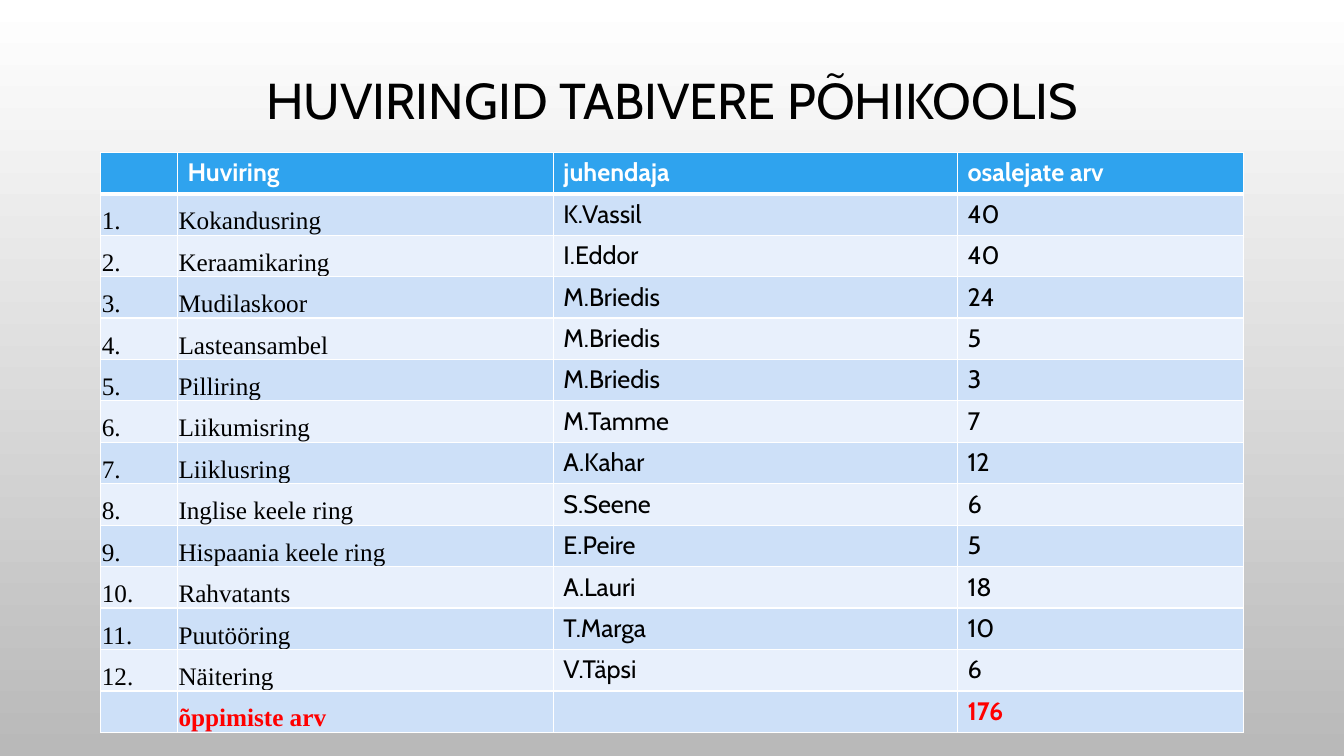
from lxml import etree
from pptx import Presentation
from pptx.dml.color import RGBColor
from pptx.enum.text import MSO_ANCHOR, PP_ALIGN
from pptx.oxml.ns import qn
from pptx.util import Pt

CENTER = PP_ALIGN.CENTER
MIDDLE, BOTTOM = MSO_ANCHOR.MIDDLE, MSO_ANCHOR.BOTTOM
SANS, SERIF = "Cabin", "Times New Roman"
BLACK, WHITE, RED = "000000", "FFFFFF", "FF0000"
HEADER_FILL, BAND_FILLS = "2FA3EE", ("CDE0F8", "E8F0FC")

TITLE_BOX = (72, 49, 816, 49)
TABLE_BOX = (72, 108.8, 816, 414.6)
COLUMN_WIDTHS = (54.8, 268.5, 288.6, 204.1)
LIST_MARGINS = {"margin_left": Pt(0.75), "margin_top": Pt(0.75),
                "margin_right": Pt(0.75), "margin_bottom": Pt(0)}

HEADER = ("", "Huviring", "juhendaja", "osalejate arv")
CLUBS = (
    ("Kokandusring", "K.Vassil", 40),
    ("Keraamikaring", "I.Eddor", 40),
    ("Mudilaskoor", "M.Briedis", 24),
    ("Lasteansambel", "M.Briedis", 5),
    ("Pilliring", "M.Briedis", 3),
    ("Liikumisring", "M.Tamme", 7),
    ("Liiklusring", "A.Kahar", 12),
    ("Inglise keele ring", "S.Seene", 6),
    ("Hispaania keele ring", "E.Peire", 5),
    ("Rahvatants", "A.Lauri", 18),
    ("Puutööring", "T.Marga", 10),
    ("Näitering", "V.Täpsi", 6),
)
TOTAL = ("", "õppimiste arv", "", sum(count for _, _, count in CLUBS))


def color(hex_value):
    """Turn a hex string into a colour."""
    return RGBColor.from_string(hex_value)


def apply_format(target, values):
    """Set each named attribute on the target."""
    for name, value in values.items():
        setattr(target, name, value)


def write_text(paragraph, text, size, font_name, hex_value, bold=False):
    """Write one formatted run into a paragraph."""
    run = paragraph.add_run()
    run.text = text
    apply_format(run.font, {"size": Pt(size), "name": font_name, "bold": bold})
    run.font.color.rgb = color(hex_value)


def paint_background(slide):
    """Fill the slide with a vertical gradient."""
    fill = slide.background.fill
    fill.gradient()
    fill.gradient_angle = 270
    for stop, position, hex_value in zip(fill.gradient_stops, (0, 1), (WHITE, "B9B9B9")):
        stop.position = position
        stop.color.rgb = color(hex_value)


def add_title(slide, box):
    """Place the centred title in the box."""
    frame = slide.shapes.add_textbox(*map(Pt, box)).text_frame
    apply_format(frame, {"word_wrap": True, "vertical_anchor": MIDDLE})
    paragraph = frame.paragraphs[0]
    apply_format(paragraph, {"alignment": CENTER, "line_spacing": 0.9})
    write_text(paragraph, "HUVIRINGID TABIVERE PÕHIKOOLIS", 36, SANS, BLACK)


def add_borders(cell, widths):
    """Draw white borders on the left, right, top and bottom of a cell."""
    properties = cell._tc.get_or_add_tcPr()
    for side, width in zip("LRTB", widths):
        line = etree.SubElement(properties, qn(f"a:ln{side}"), w=str(Pt(width)))
        solid = etree.SubElement(line, qn("a:solidFill"))
        etree.SubElement(solid, qn("a:srgbClr"), val=WHITE)


def add_club_table(slide, box):
    """Place the table of clubs, supervisors and participants in the box."""
    numbered = [(f"{number}.", *club) for number, club in enumerate(CLUBS, 1)]
    rows = [HEADER, *numbered, TOTAL]
    table = slide.shapes.add_table(len(rows), len(HEADER), *map(Pt, box)).table
    apply_format(table, {"first_row": False, "horz_banding": False})
    for column, width in zip(table.columns, COLUMN_WIDTHS):
        column.width = Pt(width)
    for row_index, values in enumerate(rows):
        table.rows[row_index].height = Pt(box[3] / len(rows))
        is_header, is_total = values is HEADER, values is TOTAL
        text_color = WHITE if is_header else RED if is_total else BLACK
        row_fill = HEADER_FILL if is_header else BAND_FILLS[(row_index - 1) % 2]
        border_widths = (1, 1, 3 if row_index == 1 else 1, 3 if is_header else 1)
        for column_index, value in enumerate(values):
            cell = table.cell(row_index, column_index)
            add_borders(cell, border_widths)
            cell.fill.solid()
            cell.fill.fore_color.rgb = color(row_fill)
            if value == "":
                continue
            in_list = not is_header and column_index < 2
            if in_list:
                apply_format(cell, {"vertical_anchor": BOTTOM, **LIST_MARGINS})
            write_text(cell.text_frame.paragraphs[0], str(value), 18,
                       SERIF if in_list else SANS, text_color, is_header or is_total)


def main():
    """Build and save the presentation."""
    presentation = Presentation()
    apply_format(presentation, {"slide_width": Pt(960), "slide_height": Pt(540)})
    slide = presentation.slides.add_slide(presentation.slide_layouts[6])
    paint_background(slide)
    add_title(slide, TITLE_BOX)
    add_club_table(slide, TABLE_BOX)
    presentation.save("out.pptx")


if __name__ == "__main__":
    main()
